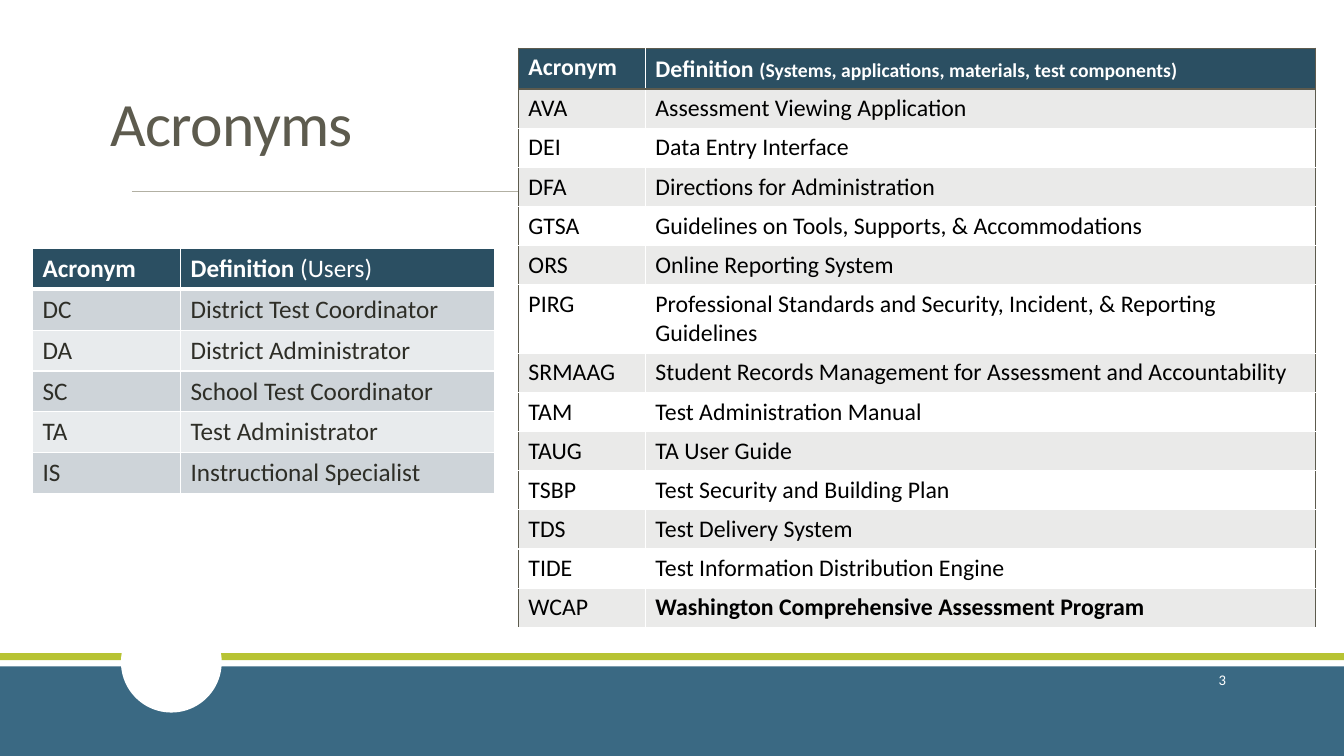
from dataclasses import dataclass

from lxml import etree
from pptx import Presentation
from pptx.dml.color import RGBColor
from pptx.enum.shapes import MSO_CONNECTOR, MSO_SHAPE
from pptx.enum.text import MSO_ANCHOR, MSO_AUTO_SIZE, PP_ALIGN
from pptx.oxml.ns import qn
from pptx.util import Pt

RECTANGLE, OVAL = MSO_SHAPE.RECTANGLE, MSO_SHAPE.OVAL
STRAIGHT = MSO_CONNECTOR.STRAIGHT
MIDDLE, BOTTOM = MSO_ANCHOR.MIDDLE, MSO_ANCHOR.BOTTOM
LEFT, RIGHT = PP_ALIGN.LEFT, PP_ALIGN.RIGHT
NO_AUTOFIT = MSO_AUTO_SIZE.NONE

WHITE = RGBColor(0xFF, 0xFF, 0xFF)
BLACK = RGBColor(0x00, 0x00, 0x00)
BLUE = RGBColor(0x3A, 0x69, 0x83)
DARK_BLUE = RGBColor(0x2B, 0x4F, 0x62)
LIME = RGBColor(0xB7, 0xC3, 0x33)
RULE_GRAY = RGBColor(0xB2, 0xB0, 0xA3)
OLIVE = RGBColor(0x5D, 0x5B, 0x4E)
DARK_TEXT = RGBColor(0x2E, 0x2E, 0x27)
BAND_DARK = RGBColor(0xCE, 0xD4, 0xD9)
BAND_LIGHT = RGBColor(0xE8, 0xEB, 0xED)
BAND_GRAY = RGBColor(0xEA, 0xEA, 0xE9)
FONT = "Calibri"


@dataclass
class Decoration:
    kind: int
    box: tuple[float, float, float, float]
    color: RGBColor


@dataclass
class TextPart:
    text: str
    size: float
    bold: bool = True


@dataclass
class AcronymTable:
    left: float
    top: float
    columns: tuple[float, float]
    header_height: float
    row_height: float
    size: float
    text_color: RGBColor
    bands: tuple[RGBColor, RGBColor]
    frame: RGBColor  # outer sides and top of the header
    header_rule: tuple[RGBColor, float]
    heading: list[TextPart]
    entries: list[tuple[str, str]]
    bold_entry: str = ""
    tall_entry: str = ""


DECORATIONS = [
    Decoration(RECTANGLE, (0, 476, 960, 64), BLUE),
    Decoration(RECTANGLE, (0, 466.5, 960, 5), LIME),
    Decoration(OVAL, (86.4, 437, 72, 72), WHITE),
]

USERS = AcronymTable(
    23.2, 177.4, (105.8, 224.4), 29.2, 29.2, 18, DARK_TEXT,
    (BAND_DARK, BAND_LIGHT), WHITE, (WHITE, 3),
    [TextPart("Definition ", 18), TextPart("(Users)", 18, False)],
    [
        ("DC", "District Test Coordinator"),
        ("DA", "District Administrator"),
        ("SC", "School Test Coordinator"),
        ("TA", "Test Administrator"),
        ("IS", "Instructional Specialist"),
    ],
)

SYSTEMS = AcronymTable(
    370.3, 34.4, (90.7, 478.8), 29.2, 28, 17, BLACK,
    (BAND_GRAY, WHITE), OLIVE, (OLIVE, 2),
    [TextPart("Definition", 17), TextPart(" ", 18),
     TextPart("(Systems, applications, materials, test components)", 14)],
    [
        ("AVA", "Assessment Viewing Application"),
        ("DEI", "Data Entry Interface"),
        ("DFA", "Directions for Administration"),
        ("GTSA", "Guidelines on Tools, Supports, & Accommodations"),
        ("ORS", "Online Reporting System"),
        ("PIRG", "Professional Standards and Security, Incident, & Reporting Guidelines"),
        ("SRMAAG", "Student Records Management for Assessment and Accountability"),
        ("TAM", "Test Administration Manual"),
        ("TAUG", "TA User Guide"),
        ("TSBP", "Test Security and Building Plan"),
        ("TDS", "Test Delivery System"),
        ("TIDE", "Test Information Distribution Engine"),
        ("WCAP", "Washington Comprehensive Assessment Program"),
    ],
    bold_entry="WCAP",
    tall_entry="PIRG",
)


def set_font(font, size: float, color: RGBColor, bold: bool = False) -> None:
    font.name, font.size, font.bold = FONT, Pt(size), bold
    font.color.rgb = color


def add_decoration(slide, item: Decoration) -> None:
    shape = slide.shapes.add_shape(item.kind, *map(Pt, item.box))
    shape.shadow.inherit = False
    shape.fill.solid()
    shape.fill.fore_color.rgb = item.color
    shape.line.fill.background()


def add_rule(slide) -> None:
    rule = slide.shapes.add_connector(STRAIGHT, Pt(94.3), Pt(136.6), Pt(879.1), Pt(136.6))
    rule.line.color.rgb = RULE_GRAY
    rule.line.width = Pt(0.5)
    etree.SubElement(rule._element.spPr, qn("a:effectLst"))


def add_title(slide) -> None:
    title = slide.shapes.title
    title.left, title.top, title.width, title.height = map(Pt, (71.8, 51.8, 208, 65.5))
    frame = title.text_frame
    frame.text = "Acronyms"
    frame.auto_size = NO_AUTOFIT
    frame.vertical_anchor = BOTTOM
    paragraph = frame.paragraphs[0]
    paragraph.alignment = LEFT
    paragraph.line_spacing = 0.85
    set_font(paragraph.font, 44, OLIVE)
    paragraph.runs[0].font._element.set("spc", "-50")


def add_slide_number(slide) -> None:
    box = slide.shapes.add_textbox(Pt(779.8), Pt(470.9), Pt(103), Pt(28.8))
    frame = box.text_frame
    frame.word_wrap = True
    frame.vertical_anchor = MIDDLE
    frame.text = "3"
    paragraph = frame.paragraphs[0]
    paragraph.alignment = RIGHT
    set_font(paragraph.font, 10.5, WHITE)


def set_border(cell, side: str, color: RGBColor, width: float) -> None:
    line = etree.SubElement(cell._tc.get_or_add_tcPr(), qn(f"a:ln{side}"), w=str(Pt(width)))
    fill = etree.SubElement(line, qn("a:solidFill"))
    etree.SubElement(fill, qn("a:srgbClr"), val=str(color))


def style_cell(cell, data: AcronymTable, row: int, column: int) -> None:
    set_border(cell, "L", data.frame if column == 0 else WHITE, 1)
    set_border(cell, "R", data.frame if column == 1 else WHITE, 1)
    top = {0: (data.frame, 1), 1: data.header_rule}.get(row, (WHITE, 1))
    set_border(cell, "T", *top)
    set_border(cell, "B", *(data.header_rule if row == 0 else (WHITE, 1)))
    cell.fill.solid()
    cell.fill.fore_color.rgb = DARK_BLUE if row == 0 else data.bands[(row - 1) % 2]


def write_cell(cell, parts: list[TextPart], color: RGBColor) -> None:
    # Table styles override paragraph fonts, so each run carries its own
    paragraph = cell.text_frame.paragraphs[0]
    for part in parts:
        run = paragraph.add_run()
        run.text = part.text
        set_font(run.font, part.size, color, part.bold)


def add_acronym_table(slide, data: AcronymTable) -> None:
    rows = [([TextPart("Acronym", data.size)], data.heading)]
    for acronym, definition in data.entries:
        rows.append(([TextPart(acronym, data.size, False)],
                     [TextPart(definition, data.size, acronym == data.bold_entry)]))
    height = data.header_height + data.row_height * len(data.entries)
    table = slide.shapes.add_table(
        len(rows), 2, Pt(data.left), Pt(data.top), Pt(sum(data.columns)), Pt(height)
    ).table
    table.horz_banding = False
    for column, width in zip(table.columns, data.columns):
        column.width = Pt(width)
    for index, cells in enumerate(rows):
        extra = data.size * 1.22 if cells[0][0].text == data.tall_entry else 0
        base = data.row_height if index else data.header_height
        table.rows[index].height = Pt(base + extra)
        for column, parts in enumerate(cells):
            cell = table.cell(index, column)
            style_cell(cell, data, index, column)
            write_cell(cell, parts, data.text_color if index else WHITE)


def main() -> None:
    presentation = Presentation()
    presentation.slide_width, presentation.slide_height = Pt(960), Pt(540)
    slide = presentation.slides.add_slide(presentation.slide_layouts[5])
    # Background bands and rule
    for item in DECORATIONS:
        add_decoration(slide, item)
    add_rule(slide)
    # Title, page number and tables
    add_title(slide)
    add_slide_number(slide)
    for data in (USERS, SYSTEMS):
        add_acronym_table(slide, data)
    presentation.save("out.pptx")


if __name__ == "__main__":
    main()
